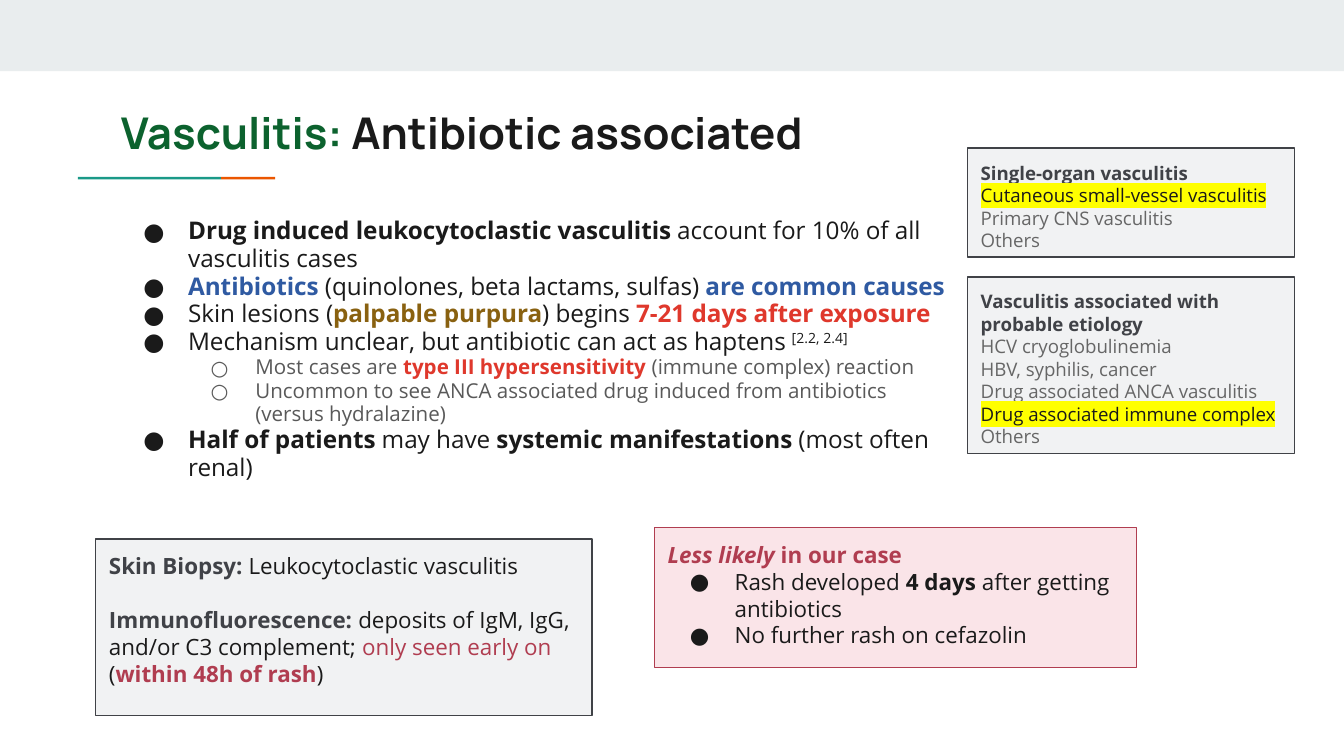
from dataclasses import dataclass

from lxml.etree import SubElement
from pptx import Presentation
from pptx.dml.color import RGBColor
from pptx.enum.shapes import MSO_SHAPE
from pptx.enum.text import MSO_ANCHOR, MSO_AUTO_SIZE, PP_ALIGN
from pptx.oxml.ns import qn
from pptx.util import Pt


@dataclass(frozen=True)
class Theme:
    ink: str = "1A1A1A"
    slate: str = "404247"
    gray: str = "666666"
    dim: str = "595959"
    green: str = "0C622E"
    blue: str = "2F5AA2"
    brown: str = "896110"
    red: str = "DF382C"
    rose: str = "B03D50"
    blush: str = "FAE4E8"
    pale: str = "F1F2F3"
    band: str = "E9EDEE"
    teal: str = "1A9988"
    flame: str = "EB5600"
    glow: str = "FFFF00"
    head: str = "Manrope"
    text: str = "Open Sans"
    title: float = 23.4
    body: float = 13
    sub: float = 11
    note: float = 12
    side: float = 10


T = Theme()


def add_rect(place, fill, line=None):
    shape = slide.shapes.add_shape(MSO_SHAPE.RECTANGLE, *map(Pt, place))
    shape.shadow.inherit = False
    shape.fill.solid()
    shape.fill.fore_color.rgb = RGBColor.from_string(fill)
    if line:
        shape.line.color.rgb = RGBColor.from_string(line)
        shape.line.width = Pt(0.75)
    else:
        shape.line.fill.background()
    return shape


def write(shape, paras, size, font=T.text, space=1.0):
    frame = shape.text_frame
    frame.word_wrap = True
    frame.auto_size = MSO_AUTO_SIZE.NONE
    frame.vertical_anchor = MSO_ANCHOR.TOP
    frame.margin_left = frame.margin_right = Pt(7.2)
    frame.margin_top = frame.margin_bottom = Pt(7.2)
    frame.text = "\n" * (len(paras) - 1)
    for para, (mark, gap, runs) in zip(frame.paragraphs, paras):
        if mark:
            level = 1 if mark == "○" else 0
            para.level = level
            props = para._p.get_or_add_pPr()
            props.set("marL", str(Pt(36 + 36 * level)))
            props.set("indent", str(-Pt(24)))
            tint = SubElement(props, qn("a:buClr"))
            SubElement(tint, qn("a:srgbClr"), val=T.dim if level else T.ink)
            SubElement(props, qn("a:buFont"), typeface=T.text)
            SubElement(props, qn("a:buChar"), char=mark)
        para.alignment = PP_ALIGN.LEFT
        para.line_spacing = space
        para.space_before = Pt(gap)
        para.space_after = Pt(0)
        for words, color, style in runs:
            run = para.add_run()
            run.text = words
            run.font.size = Pt(T.sub if mark == "○" else size)
            run.font.name = font
            run.font.bold = "b" in style
            run.font.italic = "i" in style
            run.font.color.rgb = RGBColor.from_string(color)
            props = run._r.get_or_add_rPr()
            if "^" in style:
                props.set("baseline", "30000")
            if "h" in style:
                glow = SubElement(props, qn("a:highlight"))
                SubElement(glow, qn("a:srgbClr"), val=T.glow)
                props.find(qn("a:solidFill")).addnext(glow)


deck = Presentation()
deck.slide_width, deck.slide_height = Pt(720), Pt(405)
slide = deck.slides.add_slide(deck.slide_layouts[1])

add_rect((0, 0, 720, 38.2), T.band)
add_rect((41.8, 94.8, 76.6, 1.4), T.teal)
add_rect((118.4, 94.8, 29, 1.4), T.flame)

title, body = slide.placeholders
for shape, place in ((title, (57.6, 49.7, 605.5, 42.5)), (body, (57.6, 109.4, 455.8, 177.8))):
    shape.left, shape.top, shape.width, shape.height = map(Pt, place)

write(title, [("", 0, [
    ("Vasculitis:", T.green, "b"),
    (" Antibiotic associated", T.ink, "b"),
])], T.title, T.head)

write(body, [
    ("●", 0, [
        ("Drug induced leukocytoclastic vasculitis", T.ink, "b"),
        (" account for 10% of all vasculitis cases", T.ink, ""),
    ]),
    ("●", 0, [
        ("Antibiotics ", T.blue, "b"),
        ("(quinolones, beta lactams, sulfas) ", T.ink, ""),
        ("are common causes", T.blue, "b"),
    ]),
    ("●", 0, [
        ("Skin lesions (", T.ink, ""),
        ("palpable purpura", T.brown, "b"),
        (") begins ", T.ink, ""),
        ("7-21 days after exposure", T.red, "b"),
    ]),
    ("●", 0, [
        ("Mechanism unclear, but antibiotic can act as haptens ", T.ink, ""),
        ("[2.2, 2.4]", T.ink, "^"),
    ]),
    ("○", 0, [
        ("Most cases are ", T.dim, ""),
        ("type III hypersensitivity", T.red, "b"),
        (" (immune complex) reaction", T.dim, ""),
    ]),
    ("○", 0, [
        ("Uncommon to see ANCA associated drug induced from antibiotics (versus hydralazine)", T.dim, ""),
    ]),
    ("●", 0, [
        ("Half of patients", T.ink, "b"),
        (" may have ", T.ink, ""),
        ("systemic manifestations", T.ink, "b"),
        (" (most often renal)", T.ink, ""),
    ]),
], T.body, space=0.95)

skin = add_rect((51.3, 288.7, 265.9, 94.7), T.pale, T.slate)
write(skin, [
    ("", 0, [
        ("Skin Biopsy:", T.slate, "b"),
        (" Leukocytoclastic vasculitis", T.ink, ""),
    ]),
    ("", 14.4, [
        ("Immunofluorescence: ", T.slate, "b"),
        ("deposits of IgM, IgG, and/or C3 complement; ", T.ink, ""),
        ("only seen early on", T.rose, ""),
        (" (", T.ink, ""),
        ("within 48h of rash", T.rose, "b"),
        (")", T.ink, ""),
    ]),
], T.note)

sides = (
    (148.3, 94.7, "Vasculitis associated with probable etiology", (
        "HCV cryoglobulinemia", "HBV, syphilis, cancer", "Drug associated ANCA vasculitis",
        "Drug associated immune complex", "Others")),
    (79.4, 58.4, "Single-organ vasculitis", (
        "Cutaneous small-vessel vasculitis", "Primary CNS vasculitis", "Others")),
)
marked = ("Drug associated immune complex", "Cutaneous small-vessel vasculitis")
for top, height, head, items in sides:
    paras = [("", 0, [(head, T.slate, "b")])]
    for item in items:
        look = (T.ink, "h") if item in marked else (T.gray, "")
        paras.append(("", 0, [(item, *look)]))
    write(add_rect((518.3, top, 175.2, height), T.pale, T.slate), paras, T.side)

case = add_rect((350.5, 282.6, 258.2, 74.9), T.blush, T.rose)
write(case, [
    ("", 0, [("Less likely ", T.rose, "bi"), ("in our case", T.rose, "b")]),
    ("●", 0, [
        ("Rash developed ", T.ink, ""),
        ("4 days", T.ink, "b"),
        (" after getting antibiotics", T.ink, ""),
    ]),
    ("●", 0, [("No further rash on cefazolin", T.ink, "")]),
], T.note)

deck.save("out.pptx")
